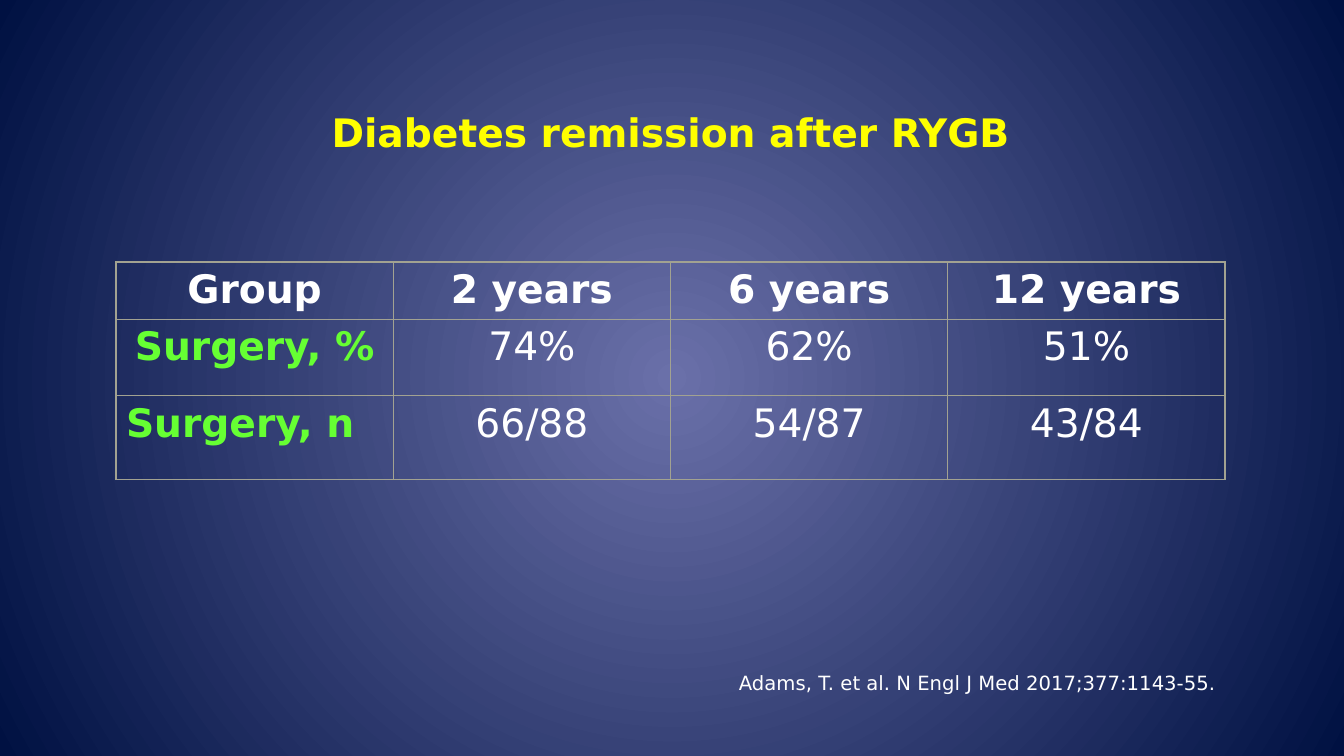
from lxml import etree
from pptx import Presentation
from pptx.dml.color import RGBColor
from pptx.enum.text import MSO_AUTO_SIZE, PP_ALIGN
from pptx.oxml.ns import qn
from pptx.util import Pt

EMU_PER_PX = 9144
LEFT, CENTER = PP_ALIGN.LEFT, PP_ALIGN.CENTER
FIT_SHAPE = MSO_AUTO_SIZE.SHAPE_TO_FIT_TEXT

YELLOW = RGBColor(0xFF, 0xFF, 0x00)
WHITE = RGBColor(0xFF, 0xFF, 0xFF)
GREEN = RGBColor(0x66, 0xFF, 0x33)
BORDER = RGBColor(0xA2, 0xA2, 0x91)
GLOW = RGBColor(0x6A, 0x70, 0xA9)
NAVY = RGBColor(0x00, 0x11, 0x42)

ROWS = [
    ["Group", "2 years", "6 years", "12 years"],
    ["Surgery, %", "74%", "62%", "51%"],
    ["Surgery, n", "66/88", "54/87", "43/84"],
]
ROW_HEIGHTS = [49, 76, 83]
COLUMN_WIDTH = 275


def px(*lengths):
    return [length * EMU_PER_PX for length in lengths]


class SlideBuilder:
    """Hold the text style and the current slide."""

    font = "DejaVu Sans"

    def __init__(self, presentation):
        self.slide = presentation.slides.add_slide(presentation.slide_layouts[6])

    def background(self, inner, outer):
        fill = self.slide.background.fill
        fill.gradient()
        for stop, color, position in zip(fill.gradient_stops, (inner, outer), (0, 1)):
            stop.color.rgb = color
            stop.position = position
        gradient = self.slide.element.find(".//" + qn("a:gradFill"))
        gradient.remove(gradient.find(qn("a:lin")))
        radial = etree.SubElement(gradient, qn("a:path"), path="circle")
        etree.SubElement(radial, qn("a:fillToRect"), l="50000", t="50000", r="50000", b="50000")

    def set_text(self, text_frame, text, size, color, bold=False, align=LEFT):
        text_frame.text = text
        paragraph = text_frame.paragraphs[0]
        paragraph.alignment = align
        font = paragraph.runs[0].font
        font.name, font.size, font.bold = self.font, Pt(size), bold
        font.color.rgb = color
        return paragraph

    def text(self, box, text, size, color, **style):
        text_frame = self.slide.shapes.add_textbox(*px(*box)).text_frame
        text_frame.word_wrap = True
        return text_frame, self.set_text(text_frame, text, size, color, **style)

    def border(self, cell, color):
        properties = cell._tc.get_or_add_tcPr()
        for side in ("a:lnL", "a:lnR", "a:lnT", "a:lnB"):
            line = etree.SubElement(properties, qn(side), w=str(Pt(1)))
            solid = etree.SubElement(line, qn("a:solidFill"))
            etree.SubElement(solid, qn("a:srgbClr"), val=str(color))

    def table(self, left, top, rows, row_heights, column_width):
        columns = len(rows[0])
        size = columns * column_width, sum(row_heights)
        table = self.slide.shapes.add_table(len(rows), columns, *px(left, top, *size)).table
        table.first_row = table.horz_banding = False
        for row, height in zip(table.rows, px(*row_heights)):
            row.height = height
        for row_index, values in enumerate(rows):
            for column_index, value in enumerate(values):
                cell = table.cell(row_index, column_index)
                self.border(cell, BORDER)
                cell.fill.background()
                is_label = row_index > 0 and column_index == 0
                is_last_label = is_label and row_index == len(rows) - 1
                self.set_text(cell.text_frame, value, 28, GREEN if is_label else WHITE,
                              bold=is_label or row_index == 0,
                              align=LEFT if is_last_label else CENTER)


def main():
    presentation = Presentation()
    presentation.slide_width, presentation.slide_height = px(1333, 750)
    builder = SlideBuilder(presentation)
    builder.background(GLOW, NAVY)
    _, title = builder.text((240, 108, 850, 73), "Diabetes remission after RYGB",
                            28, YELLOW, bold=True, align=CENTER)
    title.line_spacing = 0.9
    builder.table(115, 260, ROWS, ROW_HEIGHTS, COLUMN_WIDTH)
    citation, _ = builder.text((723, 661, 518, 34),
                               "Adams, T. et al. N Engl J Med 2017;377:1143-55.", 14, WHITE)
    citation.auto_size = FIT_SHAPE
    presentation.save("out.pptx")


if __name__ == "__main__":
    main()
